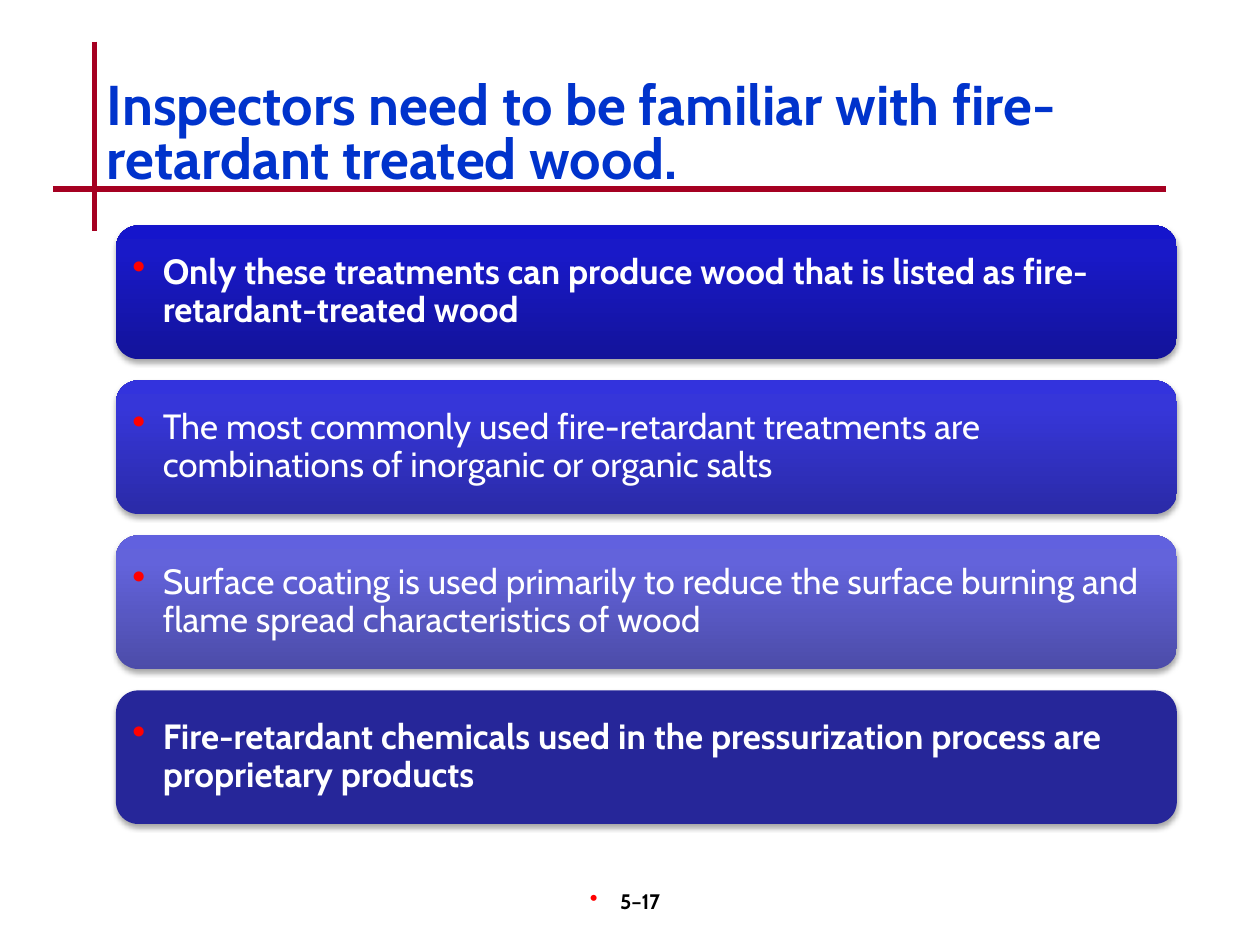
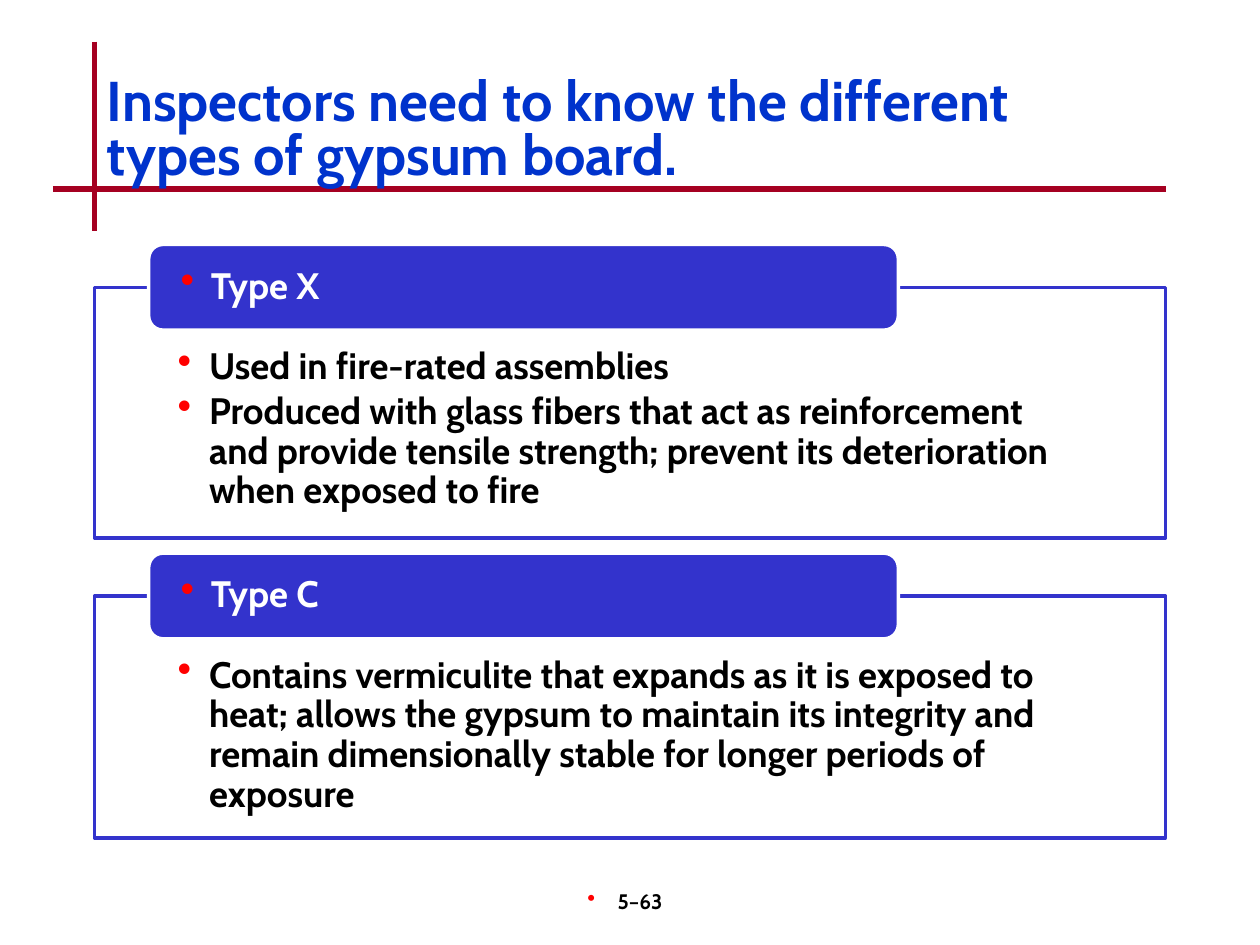
from lxml import etree
from pptx import Presentation
from pptx import util as u
from pptx.dml.color import RGBColor
from pptx.enum import shapes, text
from pptx.oxml.ns import qn

COLORS = {
    "title": "0033CC", "rule": "A50021", "bullet": "FF0000",
    "ink": "000000", "paper": "FFFFFF", "panel": "3333CC", "deep": "262699",
}
FONT = "Cabin"
RULES = [((0.75, 0.33), (0.75, 1.83)), ((0.42, 1.5), (9.25, 1.5))]

TITLE = {"size": 32, "bold": True, "color": "title", "line_spacing": 0.8}
PAGE = {"size": 12, "bold": True, "color": "ink", "hang": 0.24,
        "alignment": text.PP_ALIGN.CENTER}
BAND = {"size": 20, "color": "paper", "line_spacing": 0.9, "hang": 0.24}
HEADING = {**BAND, "size": 21, "bold": True}
DETAIL = {**HEADING, "color": "ink", "hang": 0.25, "space_after": u.Pt(3)}

# Each band: wording, bold, and its gradient from bottom to top (or None)
TREATMENTS = [
    ("Only these treatments can produce wood that is listed as "
     "fire-retardant-treated wood", True, ("13139A", "1919C8", "1515CC")),
    ("The most commonly used fire-retardant treatments are combinations of "
     "inorganic or organic salts", False, ("2A2AA7", "3636D9", "3333DD")),
    ("Surface coating is used primarily to reduce the surface burning and "
     "flame spread characteristics of wood", False,
     ("4C4CA9", "6363DB", "6161DF")),
    ("Fire-retardant chemicals used in the pressurization process are "
     "proprietary products", True, None),
]
# Each type: heading, top and height of its panel, details
BOARD_TYPES = [
    ("Type X", 2.28, 1.99, [
        "Used in fire-rated assemblies",
        "Produced with glass fibers that act as reinforcement and provide "
        "tensile strength; prevent its deterioration when exposed to fire"]),
    ("Type C", 4.73, 1.92, [
        "Contains vermiculite that expands as it is exposed to heat; allows "
        "the gypsum to maintain its integrity and remain dimensionally stable "
        "for longer periods of exposure"]),
]


def rgb(name):
    return RGBColor.from_string(COLORS[name])


def sub(parent, tag, **attributes):
    return etree.SubElement(parent, qn(tag), attributes)


def add_bullet(paragraph, hang):
    properties = paragraph._p.get_or_add_pPr()
    properties.set("marL", str(u.Inches(hang)))
    properties.set("indent", str(-u.Inches(hang)))
    sub(sub(properties, "a:buClr"), "a:srgbClr", val=COLORS["bullet"])
    sub(properties, "a:buSzPct", val="110000")
    sub(properties, "a:buChar", char="•")


def write(shape, lines, style, insets=(0.1, 0.05, 0.1, 0.05),
          anchor=text.MSO_ANCHOR.MIDDLE):
    """Fill a shape with paragraphs; insets run left, top, right, bottom."""
    frame = shape.text_frame
    frame.word_wrap = True
    frame.vertical_anchor = anchor
    for side, inset in zip(("left", "top", "right", "bottom"), insets):
        setattr(frame, f"margin_{side}", u.Inches(inset))
    for index, line in enumerate(lines):
        paragraph = frame.paragraphs[0] if index == 0 else frame.add_paragraph()
        if "hang" in style:
            add_bullet(paragraph, style["hang"])
        paragraph.alignment = text.PP_ALIGN.LEFT
        for key in ("alignment", "line_spacing", "space_after"):
            if key in style:
                setattr(paragraph, key, style[key])
        run = paragraph.add_run()
        run.text = line
        run.font.name = FONT
        run.font.size = u.Pt(style["size"])
        run.font.bold = style.get("bold", False)
        run.font.color.rgb = rgb(style["color"])


def add_text(slide, box, line, style, **layout):
    write(slide.shapes.add_textbox(*map(u.Inches, box)), [line], style, **layout)


def add_block(slide, kind, box, fill, line=None):
    block = slide.shapes.add_shape(kind, *map(u.Inches, box))
    block.shadow.inherit = False
    block.fill.solid()
    block.fill.fore_color.rgb = rgb(fill)
    if line:
        block.line.color.rgb = rgb(line)
        block.line.width = u.Pt(2)
    else:
        block.line.fill.background()
    return block


def add_soft_shadow(shape):
    effects = shape._element.spPr.find(qn("a:effectLst"))
    shadow = sub(effects, "a:outerShdw", blurRad=str(u.Pt(3.1)),
                 dist=str(u.Pt(1.8)), dir="5400000", rotWithShape="0")
    sub(sub(shadow, "a:srgbClr", val=COLORS["ink"]), "a:alpha", val="35000")


def shade_upwards(shape, stops):
    shape.fill.gradient()
    shape.fill.gradient_angle = 90
    stop_list = shape._element.spPr.find(".//" + qn("a:gsLst"))
    for stop in list(stop_list):
        stop_list.remove(stop)
    for position, color in zip((0, 80, 100), stops):
        stop = sub(stop_list, "a:gs", pos=str(position * 1000))
        sub(stop, "a:srgbClr", val=color)


def add_frame(deck, title, title_top, page):
    """Start a slide with its crossed rules, title and page number."""
    slide = deck.slides.add_slide(deck.slide_layouts[6])
    for start, end in RULES:
        rule = slide.shapes.add_connector(
            shapes.MSO_CONNECTOR.STRAIGHT, *map(u.Inches, start + end))
        rule.line.color.rgb = rgb("rule")
        rule.line.width = u.Pt(3)
        sub(rule._element.spPr, "a:effectLst")
    add_text(slide, (3.92, 7, 2.08, 0.5), page, PAGE,
             anchor=text.MSO_ANCHOR.TOP)
    add_text(slide, (0.75, title_top, 8.5, 1), title, TITLE)
    return slide


def add_band(slide, top, wording, bold, stops):
    band = add_block(slide, shapes.MSO_SHAPE.ROUNDED_RECTANGLE,
                     (0.92, top, 8.42, 1.06), "deep")
    if stops:
        shade_upwards(band, stops)
    add_soft_shadow(band)
    write(band, [wording], {**BAND, "bold": bold}, insets=(0.08,) * 4)


def add_board_type(slide, heading, top, height, details):
    """Draw an outlined panel with a heading tab across its upper edge."""
    panel = add_block(slide, shapes.MSO_SHAPE.RECTANGLE,
                      (0.75, top, 8.5, height), "paper", "panel")
    panel_color = panel._element.spPr.find(
        qn("a:solidFill") + "/" + qn("a:srgbClr"))
    sub(panel_color, "a:alpha", val="90000")
    write(panel, details, DETAIL, insets=(0.66, 0.48, 0.66, 0.16),
          anchor=text.MSO_ANCHOR.TOP)
    tab = add_block(slide, shapes.MSO_SHAPE.ROUNDED_RECTANGLE,
                    (1.18, top - 0.34, 5.95, 0.68), "panel", "paper")
    write(tab, [heading], HEADING, insets=(0.22, 0, 0.22, 0))


def main():
    deck = Presentation()
    deck.slide_width, deck.slide_height = u.Inches(10), u.Inches(7.5)

    wood = add_frame(deck, "Inspectors need to be familiar with "
                     "fire-retardant treated wood.", 0.58, "5–17")
    for index, treatment in enumerate(TREATMENTS):
        add_band(wood, 1.79 + 1.23 * index, *treatment)

    gypsum = add_frame(deck, "Inspectors need to know the different types "
                       "of gypsum board.", 0.55, "5–63")
    for board_type in BOARD_TYPES:
        add_board_type(gypsum, *board_type)

    deck.save("out.pptx")


if __name__ == "__main__":
    main()
